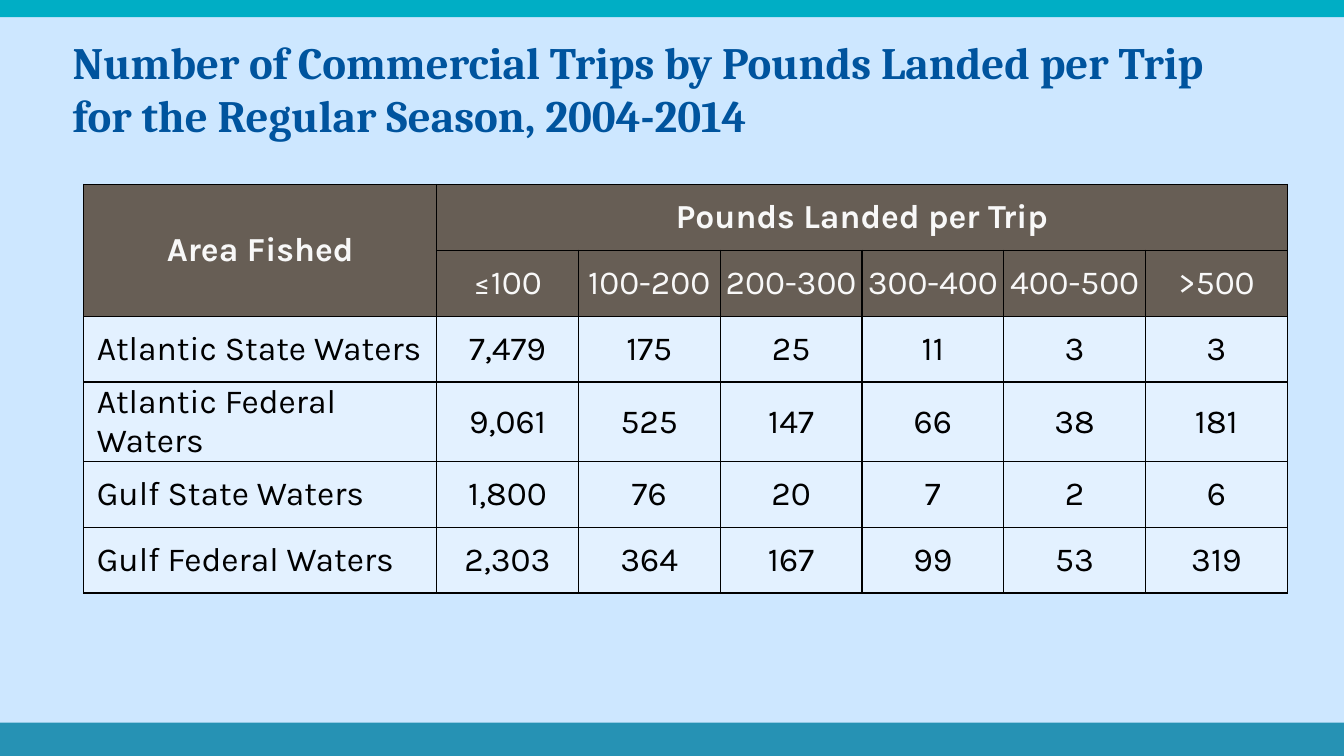
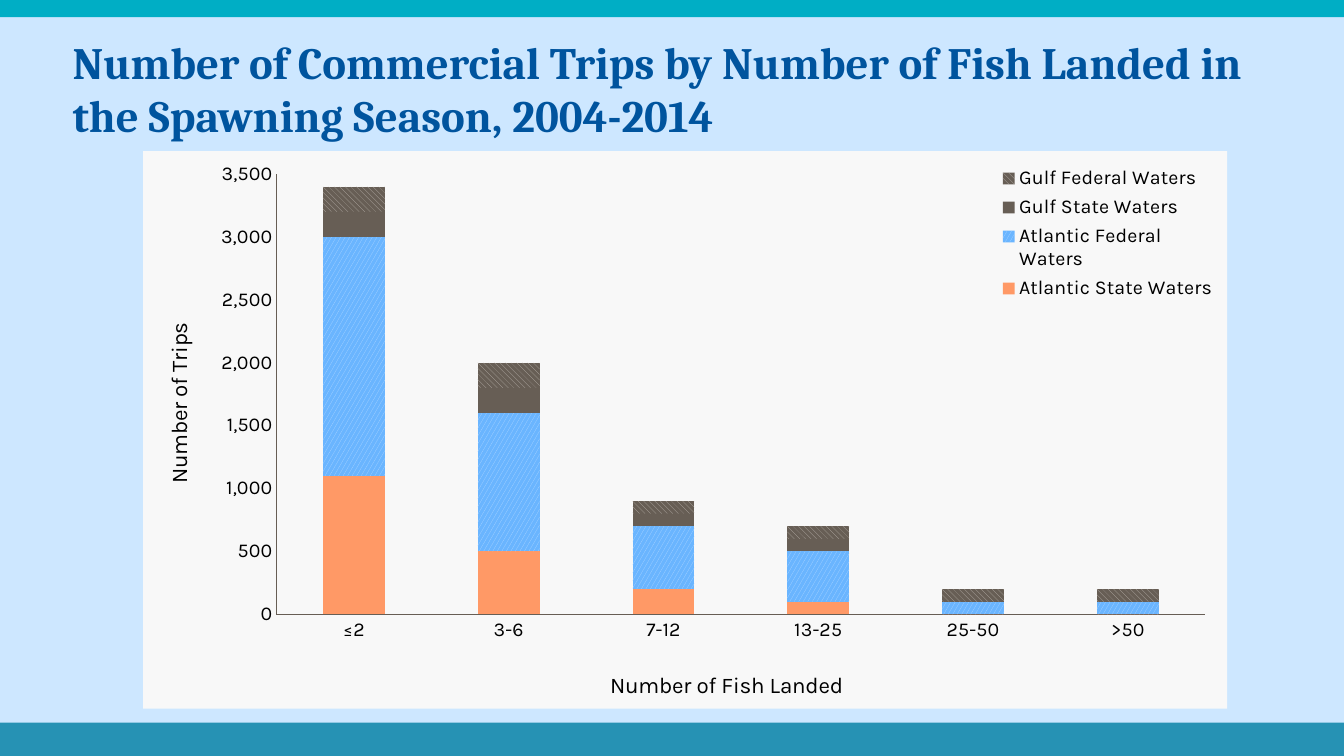
from pptx import Presentation
from pptx.chart.data import CategoryChartData
from pptx.dml.color import RGBColor
from pptx.enum.chart import XL_CHART_TYPE, XL_LEGEND_POSITION, XL_TICK_MARK
from pptx.enum.dml import MSO_PATTERN
from pptx.enum.shapes import MSO_SHAPE
from pptx.enum.text import MSO_ANCHOR, MSO_AUTO_SIZE, PP_ALIGN
from pptx.oxml import parse_xml
from pptx.oxml.ns import nsdecls
from pptx.util import Inches, Pt

RECT = MSO_SHAPE.RECTANGLE
MIDDLE = MSO_ANCHOR.MIDDLE
LEFT, CENTER = PP_ALIGN.LEFT, PP_ALIGN.CENTER
STACKED = XL_CHART_TYPE.COLUMN_STACKED
CORNER = XL_LEGEND_POSITION.CORNER
NO_TICK = XL_TICK_MARK.NONE
CONFETTI = MSO_PATTERN.LARGE_CONFETTI
DIAGONAL = MSO_PATTERN.WIDE_DOWNWARD_DIAGONAL

SKY, TEAL, SEA, NAVY = "CDE7FF", "00AEC5", "2692B4", "00549E"
BROWN, PALE, WHITE, BLACK = "675E55", "E3F1FF", "F8F8F8", "000000"
HEAD, BODY = "Cambria", "Karla"
WIDE, HIGH = 13.33, 7.5
SPAN, STUB, DEEP = 11.94, 3.5, 3.92

BINS = ["≤100", "100-200", "200-300", "300-400", "400-500", ">500"]
ROWS = [
    ("Atlantic State Waters", "7,479", "175", "25", "11", "3", "3"),
    ("Atlantic Federal Waters", "9,061", "525", "147", "66", "38", "181"),
    ("Gulf State Waters", "1,800", "76", "20", "7", "2", "6"),
    ("Gulf Federal Waters", "2,303", "364", "167", "99", "53", "319"),
]
CATS = ["≤2", "3-6", "7-12", "13-25", "25-50", ">50"]
SERIES = [
    ("Atlantic State Waters", (1100, 500, 200, 100, 0, 0), "FF9966", None, None),
    ("Atlantic Federal Waters", (1900, 1100, 500, 400, 100, 100),
     "6AB5FF", CONFETTI, "B3D9FF"),
    ("Gulf State Waters", (200, 200, 100, 100, 0, 0), BROWN, None, None),
    ("Gulf Federal Waters", (200, 200, 100, 100, 100, 100),
     BROWN, DIAGONAL, "B9B1AA"),
]


def rgb(code):
    return RGBColor.from_string(code)


def paint(fill, code):
    fill.solid()
    fill.fore_color.rgb = rgb(code)


def style(font, size, code, face=BODY, bold=False):
    font.size, font.name, font.bold = Pt(size), face, bold
    font.color.rgb = rgb(code)


def write(frame, text, size, code, face=BODY, bold=False, align=LEFT):
    para = frame.paragraphs[0]
    para.alignment = align
    run = para.add_run()
    run.text = text
    style(run.font, size, code, face, bold)


def add_band(slide, master, num, top, high, code):
    band = slide.shapes.add_shape(
        RECT, 0, Inches(top), Inches(WIDE), Inches(high))
    band.shadow.inherit = False
    paint(band.fill, code)
    band.line.fill.background()
    band.element.nvSpPr.cNvPr.set("id", str(num))
    master.shapes.element.insert(2, band.element)


def set_master(slide, master):
    paint(master.background.fill, SKY)
    add_band(slide, master, 20, 0, 0.17, TEAL)
    add_band(slide, master, 21, HIGH - 0.33, 0.33, SEA)


def add_title(slide, text):
    title = slide.shapes.title
    title.left, title.top = Inches(0.62), Inches(0.25)
    title.width, title.height = Inches(11.97), Inches(1.25)
    frame = title.text_frame
    frame.auto_size = MSO_AUTO_SIZE.NONE
    frame.vertical_anchor = MIDDLE
    write(frame, text, 32, NAVY, HEAD, True)


def add_edges(cell):
    props = cell._tc.get_or_add_tcPr()
    for num, side in enumerate(("lnL", "lnR", "lnT", "lnB")):
        props.insert(num, parse_xml(
            f'<a:{side} {nsdecls("a")} w="12700"><a:solidFill>'
            f'<a:srgbClr val="{BLACK}"/></a:solidFill></a:{side}>'))


def fill_cell(cell, text, row, col):
    top = row < 2
    paint(cell.fill, BROWN if top else PALE)
    add_edges(cell)
    cell.vertical_anchor = MIDDLE
    if row:
        cell.margin_left = cell.margin_right = cell.margin_top = Inches(0.01)
        cell.margin_bottom = 0
    label = col == 0 and not top
    if label:
        cell.margin_left = Inches(0.13)
    if text:
        write(cell.text_frame, text, 24, WHITE if top else BLACK,
              bold=row == 0, align=LEFT if label else CENTER)


def add_grid(slide):
    lines = [["Area Fished", "Pounds Landed per Trip"] + [""] * 5,
             [""] + BINS, *ROWS]
    table = slide.shapes.add_table(
        len(lines), len(BINS) + 1, Inches(0.83), Inches(1.83),
        Inches(SPAN), Inches(DEEP)).table
    for num, col in enumerate(table.columns):
        col.width = Inches((SPAN - STUB) / len(BINS) if num else STUB)
    for row, line in enumerate(lines):
        table.rows[row].height = Inches(DEEP / len(lines))
        for col, text in enumerate(line):
            fill_cell(table.cell(row, col), text, row, col)
    table.cell(0, 0).merge(table.cell(1, 0))
    table.cell(0, 1).merge(table.cell(0, 6))


def place(chart, query, index, inner=False, **spots):
    node = chart.element.xpath(query)[0]
    for old in node.xpath("c:layout"):
        node.remove(old)
    target = '<c:layoutTarget val="inner"/>' if inner else ""
    modes = "".join(f'<c:{key}Mode val="edge"/>' for key in "xy")
    sizes = "".join(f'<c:{key} val="{val}"/>' for key, val in spots.items())
    node.insert(index, parse_xml(
        f'<c:layout {nsdecls("c")}><c:manualLayout>{target}{modes}{sizes}'
        '</c:manualLayout></c:layout>'))


def set_axis(axis, title):
    axis.has_major_gridlines = False
    axis.major_tick_mark = axis.minor_tick_mark = NO_TICK
    style(axis.tick_labels.font, 14, BLACK)
    axis.format.line.color.rgb = rgb(BROWN)
    axis.format.line.width = Pt(0.75)
    write(axis.axis_title.text_frame, title, 16, BLACK, align=CENTER)


def set_bars(plot):
    plot.gap_width, plot.overlap = 150, 100
    plot.vary_by_categories = False
    for series, (_, _, code, weave, ink) in zip(plot.series, SERIES):
        fill = series.format.fill
        if weave:
            fill.patterned()
            fill.pattern = weave
            fill.fore_color.rgb, fill.back_color.rgb = rgb(ink), rgb(code)
        else:
            paint(fill, code)


def set_back(chart, code):
    chart.element.xpath("c:txPr")[0].addprevious(parse_xml(
        f'<c:spPr {nsdecls("c", "a")}><a:solidFill><a:srgbClr val="{code}"/>'
        '</a:solidFill><a:ln><a:noFill/></a:ln></c:spPr>'))


def add_bars(slide):
    data = CategoryChartData(number_format="#,##0")
    data.categories = CATS
    for name, vals, *_ in SERIES:
        data.add_series(name, vals)
    chart = slide.shapes.add_chart(
        STACKED, Inches(1.42), Inches(1.5), Inches(10.75), Inches(5.53),
        data).chart
    chart.has_title = False
    style(chart.font, 10, BLACK)
    set_back(chart, WHITE)
    set_bars(chart.plots[0])
    set_axis(chart.category_axis, "Number of Fish Landed")
    axis = chart.value_axis
    set_axis(axis, "Number of Trips")
    axis.minimum_scale, axis.maximum_scale, axis.major_unit = 0, 3500, 500
    axis.tick_labels.number_format = "#,##0"
    axis.tick_labels.number_format_is_linked = False
    chart.has_legend = True
    legend = chart.legend
    legend.position = CORNER
    legend.include_in_layout = True
    style(legend.font, 14, BLACK)
    place(chart, "//c:plotArea", 0, True, x=0.123, y=0.041, w=0.857, h=0.79)
    place(chart, "//c:catAx/c:title", 1, x=0.427, y=0.925)
    place(chart, "//c:valAx/c:title", 1, x=0.016, y=0.3)
    place(chart, "//c:legend", 1, x=0.79, y=0.018, w=0.2, h=0.26)


def main():
    prs = Presentation()
    prs.slide_width, prs.slide_height = Inches(WIDE), Inches(HIGH)
    layout = prs.slide_layouts[5]
    pages = [
        ("Number of Commercial Trips by Pounds Landed per Trip "
         "for the Regular Season, 2004-2014", add_grid),
        ("Number of Commercial Trips by Number of Fish Landed in "
         "the Spawning Season, 2004-2014", add_bars),
    ]
    for num, (title, build) in enumerate(pages):
        slide = prs.slides.add_slide(layout)
        if num == 0:
            set_master(slide, prs.slide_master)
        add_title(slide, title)
        build(slide)
    prs.save("out.pptx")


if __name__ == "__main__":
    main()
